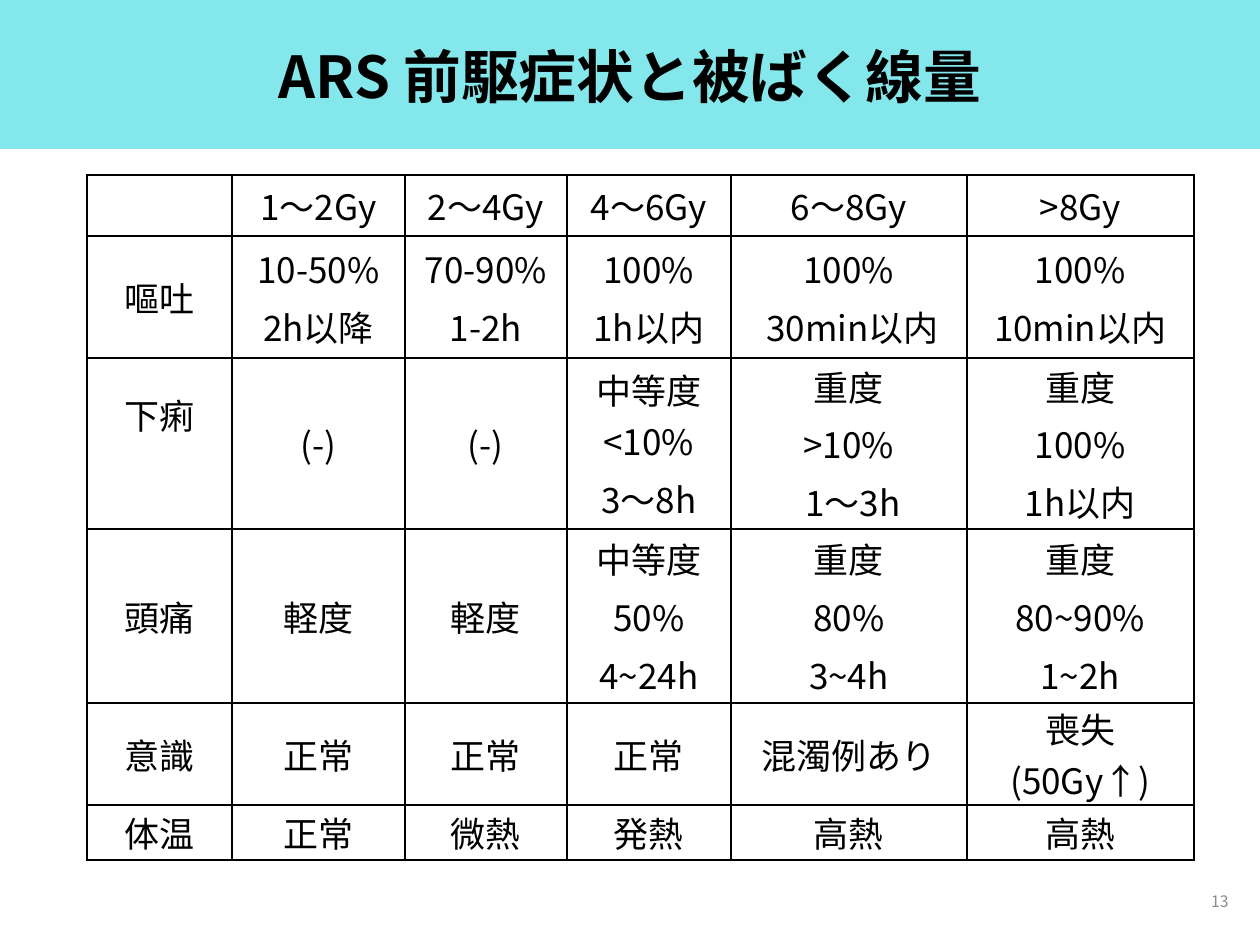
from dataclasses import dataclass

from lxml.etree import SubElement
from pptx import Presentation
from pptx.dml.color import RGBColor
from pptx.enum.shapes import MSO_SHAPE
from pptx.enum.text import MSO_ANCHOR, PP_ALIGN
from pptx.oxml.ns import qn
from pptx.util import Inches, Pt

PX = Inches(1) // 126


@dataclass(frozen=True)
class Theme:
    font: str = "Noto Sans CJK JP"
    ink: str = "000000"
    muted: str = "8C8C8C"
    band: str = "0BD0D9"
    band_alpha: int = 50000
    title_size: int = 33
    cell_size: int = 20
    number_size: int = 9
    paragraph_gap: int = 4
    border: int = 1


THEME = Theme()


def add_run(paragraph, text, size, color=THEME.ink, bold=False, align=PP_ALIGN.CENTER):
    paragraph.alignment = align
    run = paragraph.add_run()
    run.text = text
    run.font.size = Pt(size)
    run.font.bold = bold
    run.font.color.rgb = RGBColor.from_string(color)
    run.font.name = THEME.font
    SubElement(run.font._element, qn("a:ea"), typeface=THEME.font)


def add_frame(slide, left, top, width, height):
    frame = slide.shapes.add_textbox(left * PX, top * PX, width * PX, height * PX).text_frame
    frame.word_wrap = True
    frame.vertical_anchor = MSO_ANCHOR.MIDDLE
    return frame


presentation = Presentation()
presentation.slide_width = 1260 * PX
presentation.slide_height = 945 * PX
slide = presentation.slides.add_slide(presentation.slide_layouts[6])

# Title band, half transparent
band = slide.shapes.add_shape(MSO_SHAPE.RECTANGLE, 0, 0, 1260 * PX, 149 * PX)
band.shadow.inherit = False
band.line.fill.background()
band.fill.solid()
band.fill.fore_color.rgb = RGBColor.from_string(THEME.band)
band_color = next(band._element.spPr.iter(qn("a:srgbClr")))
SubElement(band_color, qn("a:alpha"), val=str(THEME.band_alpha))

# Title
title = add_frame(slide, 87, 26, 1086, 107).paragraphs[0]
title.line_spacing = 0.9
add_run(title, "ARS 前駆症状と被ばく線量", THEME.title_size, bold=True)

# Symptoms by dose: one row per symptom, one list entry per line of a cell
column_widths = [145, 173, 162, 164, 236, 227]
row_heights = [61, 122, 171, 174, 102, 55]
symptoms = [
    [[], ["1～2Gy"], ["2～4Gy"], ["4～6Gy"], ["6～8Gy"], [">8Gy"]],
    [["嘔吐"], ["10-50%", "2h以降"], ["70-90%", "1-2h"], ["100%", "1h以内"],
     ["100%", " 30min以内"], ["100%", "10min以内"]],
    [["下痢"], ["(-)"], ["(-)"], ["中等度<10%", "3～8h"],
     ["重度", ">10%", " 1～3h"], ["重度", "100%", "1h以内"]],
    [["頭痛"], ["軽度"], ["軽度"], ["中等度", "50%", "4~24h"],
     ["重度", "80%", "3~4h"], ["重度", "80~90%", "1~2h"]],
    [["意識"], ["正常"], ["正常"], ["正常"], ["混濁例あり"], ["喪失(50Gy↑)"]],
    [["体温"], ["正常"], ["微熱"], ["発熱"], ["高熱"], ["高熱"]],
]
dose_table = slide.shapes.add_table(
    len(row_heights), len(column_widths), 87 * PX, 175 * PX,
    sum(column_widths) * PX, sum(row_heights) * PX).table
dose_table.first_row = False
dose_table.horz_banding = False
for column, width in zip(dose_table.columns, column_widths):
    column.width = width * PX
for row, height in zip(dose_table.rows, row_heights):
    row.height = height * PX

for row, findings in zip(dose_table.rows, symptoms):
    for cell, lines in zip(row.cells, findings):
        cell.vertical_anchor = MSO_ANCHOR.MIDDLE
        cell.margin_left = cell.margin_right = 12 * PX
        cell.margin_top = cell.margin_bottom = 0
        for index, line in enumerate(lines):
            frame = cell.text_frame
            paragraph = frame.add_paragraph() if index else frame.paragraphs[0]
            paragraph.space_before = Pt(THEME.paragraph_gap)
            add_run(paragraph, line, THEME.cell_size)
        # Borders come before the fill in the cell properties
        for side in ("a:lnL", "a:lnR", "a:lnT", "a:lnB"):
            border = SubElement(cell._tc.get_or_add_tcPr(), qn(side), w=str(Pt(THEME.border)))
            SubElement(SubElement(border, qn("a:solidFill")), qn("a:srgbClr"), val=THEME.ink)
        cell.fill.background()

# The diarrhoea label sits one line above the middle of its row
dose_table.cell(2, 0).margin_bottom = 58 * PX

# Slide number
number = add_frame(slide, 958, 876, 283, 50).paragraphs[0]
add_run(number, "13", THEME.number_size, THEME.muted, align=PP_ALIGN.RIGHT)

presentation.save("out.pptx")
